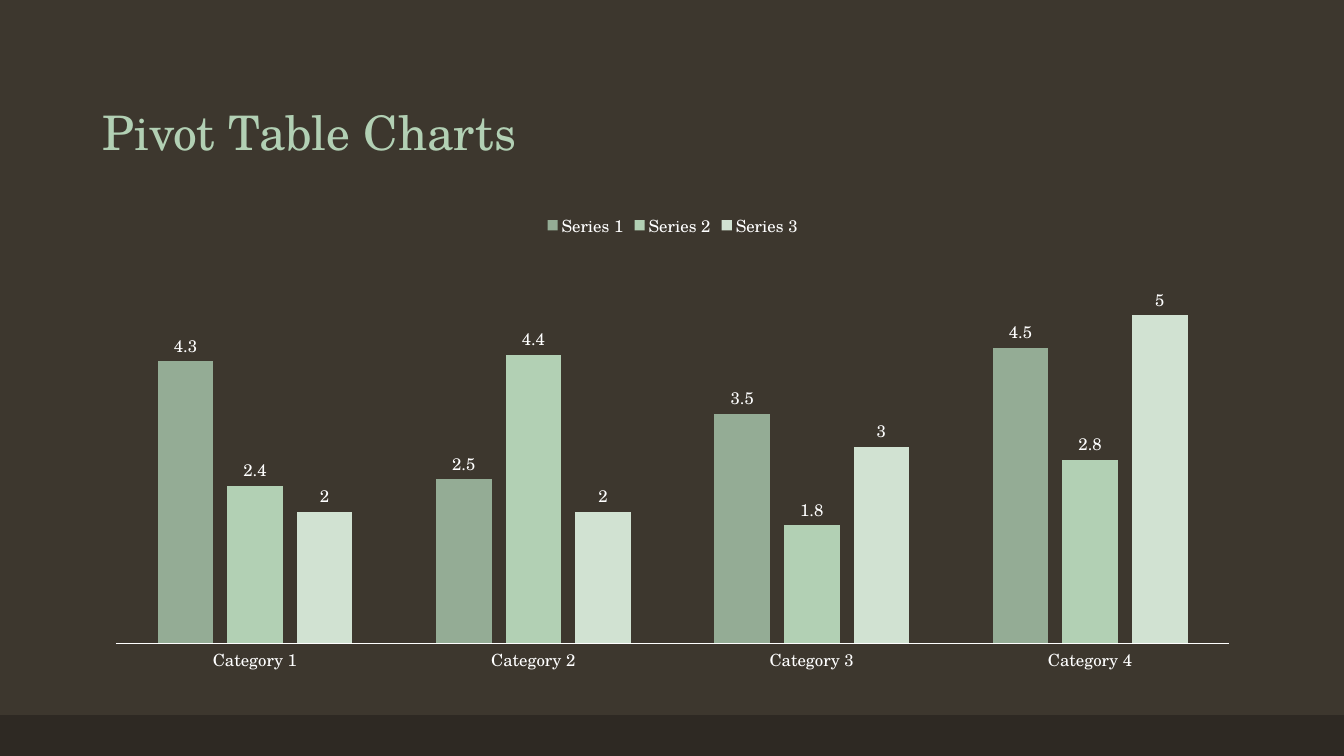
import pptx
import pptx.chart.data
import pptx.dml.color
import pptx.enum.chart
import pptx.enum.shapes
import pptx.enum.text
import pptx.oxml
import pptx.oxml.ns
import pptx.util
from dataclasses import dataclass

WIDTH, HEIGHT = pptx.util.Inches(13.33), pptx.util.Inches(7.5)
LEFT, CONTENT_WIDTH = 0.069, 0.863  # shares of the slide width


@dataclass(frozen=True)
class Theme:
    background: str = "3D372E"
    band: str = "2E2923"
    title: str = "B2D0B4"
    text: str = "FFFFFF"
    series: tuple = ("94AC95", "B2D0B4", "D1E2D2")
    face: str = "TeX Gyre Schola"
    title_size: int = 34
    label_size: int = 12
    base_size: int = 10


THEME = Theme()
CATEGORIES = [f"Category {n}" for n in range(1, 5)]
SERIES = {
    "Series 1": (4.3, 2.5, 3.5, 4.5),
    "Series 2": (2.4, 4.4, 1.8, 2.8),
    "Series 3": (2, 2, 3, 5),
}


def rgb(value):
    return pptx.dml.color.RGBColor.from_string(value)


def area(left, top, width, height):
    """Turn shares of the slide into lengths."""
    return (round(WIDTH * left), round(HEIGHT * top),
            round(WIDTH * width), round(HEIGHT * height))


def paint(fill, color):
    fill.solid()
    fill.fore_color.rgb = rgb(color)


def apply(target, values):
    for name, value in values.items():
        setattr(target, name, value)


def style_font(font, size, color=THEME.text):
    apply(font, {"name": THEME.face, "size": pptx.util.Pt(size), "bold": False})
    font.color.rgb = rgb(color)


def add_band(s):
    band = s.shapes.add_shape(pptx.enum.shapes.MSO_SHAPE.RECTANGLE,
                              *area(0, 0.946, 1, 0.054))
    paint(band.fill, THEME.band)
    band.line.fill.background()
    band.shadow.inherit = False


def set_title(s, text):
    title = s.shapes.title
    box = area(LEFT, 0.053, CONTENT_WIDTH, 0.167)
    apply(title, dict(zip(("left", "top", "width", "height"), box)))
    tf = title.text_frame
    apply(tf, {"word_wrap": True,
               "vertical_anchor": pptx.enum.text.MSO_ANCHOR.BOTTOM})
    p = tf.paragraphs[0]
    apply(p, {"alignment": pptx.enum.text.PP_ALIGN.LEFT, "line_spacing": 0.9})
    r = p.add_run()
    r.text = text
    style_font(r.font, THEME.title_size, THEME.title)


def place_plot(chart, **shares):
    """Fix the inner plot area, in shares of the chart's frame."""
    plot_area = chart.plots[0]._element.getparent()
    for old in plot_area.findall(pptx.oxml.ns.qn("c:layout")):
        plot_area.remove(old)
    sizes = "".join(f'<c:{k} val="{v}"/>' for k, v in shares.items())
    plot_area.insert(0, pptx.oxml.parse_xml(
        f'<c:layout {pptx.oxml.ns.nsdecls("c")}><c:manualLayout>'
        '<c:layoutTarget val="inner"/><c:xMode val="edge"/><c:yMode val="edge"/>'
        f'{sizes}</c:manualLayout></c:layout>'))


def style_axes(chart):
    none = pptx.enum.chart.XL_TICK_MARK.NONE
    axis = chart.category_axis
    apply(axis, {"major_tick_mark": none, "minor_tick_mark": none,
                 "has_major_gridlines": False})
    style_font(axis.tick_labels.font, THEME.label_size)
    axis.format.line.color.rgb = rgb(THEME.text)
    axis.format.line.width = pptx.util.Pt(0.75)
    apply(chart.value_axis, {"visible": False, "has_major_gridlines": False,
                             "minimum_scale": 0, "maximum_scale": 6})


def add_column_chart(s):
    data = pptx.chart.data.CategoryChartData()
    data.categories = CATEGORIES
    for name, values in SERIES.items():
        data.add_series(name, values)
    chart = s.shapes.add_chart(
        pptx.enum.chart.XL_CHART_TYPE.COLUMN_CLUSTERED,
        *area(LEFT, 0.267, CONTENT_WIDTH, 0.635), data).chart
    apply(chart, {"has_title": False, "has_legend": True})
    style_font(chart.font, THEME.base_size)
    apply(chart.legend, {"position": pptx.enum.chart.XL_LEGEND_POSITION.TOP,
                         "include_in_layout": False})
    style_font(chart.legend.font, THEME.label_size)
    style_axes(chart)
    plot = chart.plots[0]
    apply(plot, {"gap_width": 150, "overlap": -25, "vary_by_categories": False})
    for series, color in zip(plot.series, THEME.series):
        paint(series.format.fill, color)
        labels = series.data_labels
        apply(labels, {
            "show_value": True,
            "position": pptx.enum.chart.XL_LABEL_POSITION.OUTSIDE_END})
        style_font(labels.font, THEME.label_size)
    place_plot(chart, x=0.02, y=0.1, w=0.96, h=0.82)


def main():
    prs = pptx.Presentation()
    apply(prs, {"slide_width": WIDTH, "slide_height": HEIGHT})
    s = prs.slides.add_slide(prs.slide_layouts.get_by_name("Title Only"))
    paint(s.background.fill, THEME.background)
    add_band(s)
    set_title(s, "Pivot Table Charts")
    add_column_chart(s)
    prs.save("out.pptx")


if __name__ == "__main__":
    main()
